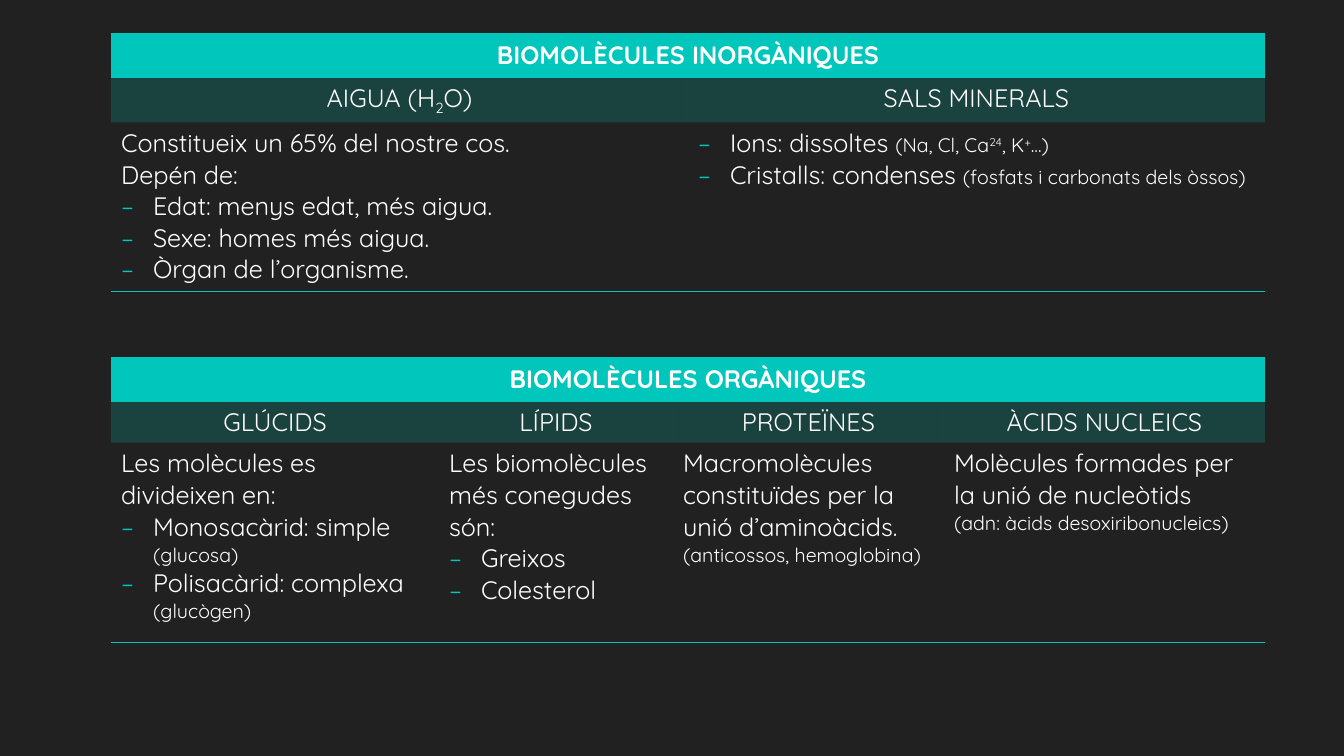
"""Builds a slide with two tables that classify inorganic and organic biomolecules."""
from dataclasses import dataclass

from lxml.etree import SubElement
from pptx import Presentation
from pptx.dml.color import RGBColor
from pptx.enum.text import PP_ALIGN as Align
from pptx.oxml.ns import qn
from pptx.slide import Slide
from pptx.table import _Cell as Cell
from pptx.text.text import _Paragraph as Paragraph
from pptx.util import Pt

PX = 914400 / 100.8
FONT = "Quicksand"
TEAL = RGBColor(0x00, 0xC6, 0xBB)
WHITE = RGBColor(0xFF, 0xFF, 0xFF)
CHARCOAL = RGBColor(0x21, 0x21, 0x21)
PLAIN_STYLE = "{2D5ABB26-0587-4C30-8999-92F81FD0307C}"
INDENT = 32
BODY, DETAIL = 18, 14


@dataclass(frozen=True)
class Span:
    text: str
    size: int = BODY
    baseline: int = 0


@dataclass(frozen=True)
class Line:
    spans: tuple[Span, ...]
    bulleted: bool = False


@dataclass(frozen=True)
class Category:
    heading: tuple[Span, ...]
    width: int
    lines: tuple[Line, ...]


@dataclass(frozen=True)
class Family:
    title: str
    top: int
    row_heights: tuple[int, int, int]
    categories: tuple[Category, ...]


def px(length: int) -> int:
    """Turn pixels into EMU."""
    return round(length * PX)


def text(*spans: Span) -> Line:
    """Describe a plain paragraph."""
    return Line(spans)


def item(*spans: Span) -> Line:
    """Describe a bulleted paragraph."""
    return Line(spans, True)


def detail(content: str, baseline: int = 0) -> Span:
    """Describe a small piece of text."""
    return Span(content, DETAIL, baseline)


FAMILIES = (
    Family("BIOMOLÈCULES INORGÀNIQUES", 34, (43, 44, 169), (
        Category((Span("AIGUA (H"), Span("2", baseline=-25), Span("O)")), 577, (
            text(Span("Constitueix un 65% del nostre cos.\nDepén de:")),
            item(Span("Edat: menys edat, més aigua.")),
            item(Span("Sexe: homes més aigua.")),
            item(Span("Òrgan de l’organisme.")),
        )),
        Category((Span("SALS MINERALS"),), 577, (
            item(Span("Ions: dissoltes "), detail("(Na, Cl, Ca"), detail("24", 30),
                 detail(", K"), detail("+", 30), detail("...)")),
            item(Span("Cristalls: condenses "), detail("(fosfats i carbonats dels òssos)")),
        )),
    )),
    Family("BIOMOLÈCULES ORGÀNIQUES", 358, (43, 41, 200), (
        Category((Span("GLÚCIDS"),), 328, (
            text(Span("Les molècules es divideixen en:")),
            item(Span("Monosacàrid: simple "), detail("(glucosa)")),
            item(Span("Polisacàrid: complexa "), detail("(glucògen)")),
        )),
        Category((Span("LÍPIDS"),), 234, (
            text(Span("Les biomolècules més conegudes són:")),
            item(Span("Greixos")),
            item(Span("Colesterol")),
        )),
        Category((Span("PROTEÏNES"),), 271, (
            text(Span("Macromolècules constituïdes per la unió d’aminoàcids.")),
            text(detail("(anticossos, hemoglobina)")),
        )),
        Category((Span("ÀCIDS NUCLEICS"),), 321, (
            text(Span("Molècules formades per la unió de nucleòtids")),
            text(detail("(adn: àcids desoxiribonucleics)")),
        )),
    )),
)


def add_bullet(paragraph: Paragraph) -> None:
    """Give a paragraph a hanging teal dash."""
    properties = paragraph._p.get_or_add_pPr()
    properties.set("marL", str(px(INDENT)))
    properties.set("indent", str(-px(INDENT)))
    colour = SubElement(properties, qn("a:buClr"))
    SubElement(colour, qn("a:srgbClr"), val=str(TEAL))
    SubElement(properties, qn("a:buFont"), typeface=FONT)
    SubElement(properties, qn("a:buChar"), char="–")


def write(paragraph: Paragraph, span: Span, *, bold: bool = False) -> None:
    """Add a formatted span, with a line break at each newline."""
    for index, piece in enumerate(span.text.split("\n")):
        if index:
            paragraph.add_line_break()
        run = paragraph.add_run()
        run.text = piece
        font = run.font
        font.name, font.size, font.bold = FONT, Pt(span.size), bold
        font.color.rgb = WHITE
        if span.baseline:
            run._r.get_or_add_rPr().set("baseline", str(span.baseline * 1000))


def fill_cell(cell: Cell, lines: tuple[Line, ...], *, centred: bool = False,
              bold: bool = False) -> None:
    """Write the lines of a cell."""
    frame = cell.text_frame
    for index, line in enumerate(lines):
        paragraph = frame.add_paragraph() if index else frame.paragraphs[0]
        paragraph.alignment = Align.CENTER if centred else Align.LEFT
        if line.bulleted:
            add_bullet(paragraph)
        for span in line.spans:
            write(paragraph, span, bold=bold)


def paint_cell(cell: Cell, *, edges: str = "", opacity: int = 0) -> None:
    """Draw teal edges, then a teal fill of the given opacity in percent."""
    properties = cell._tc.get_or_add_tcPr()
    for edge in edges:
        border = SubElement(properties, qn(f"a:ln{edge}"), w=str(Pt(1)))
        solid = SubElement(border, qn("a:solidFill"))
        SubElement(solid, qn("a:srgbClr"), val=str(TEAL))
    if not opacity:
        cell.fill.background()
        return
    cell.fill.solid()
    cell.fill.fore_color.rgb = TEAL
    if opacity < 100:
        colour = properties.find(f"{qn('a:solidFill')}/{qn('a:srgbClr')}")
        SubElement(colour, qn("a:alpha"), val=str(opacity * 1000))


def draw_family(slide: Slide, family: Family) -> None:
    """Add the table of one family of biomolecules."""
    categories = family.categories
    width = sum(category.width for category in categories)
    table = slide.shapes.add_table(
        3, len(categories), px(111), px(family.top), px(width), px(sum(family.row_heights))
    ).table
    table.first_row = table.horz_banding = False
    table._tbl.tblPr.find(qn("a:tableStyleId")).text = PLAIN_STYLE
    for row, height in zip(table.rows, family.row_heights):
        row.height = px(height)
    for column, category in enumerate(categories):
        table.columns[column].width = px(category.width)
        title, heading, body = (table.cell(row, column) for row in range(3))
        paint_cell(title, edges="TB", opacity=100)
        paint_cell(heading, opacity=20)
        paint_cell(body, edges="B")
        fill_cell(heading, (Line(category.heading),), centred=True)
        fill_cell(body, category.lines)
    title = table.cell(0, 0)
    title.merge(table.cell(0, len(categories) - 1))
    fill_cell(title, (text(Span(family.title)),), centred=True, bold=True)


def main() -> None:
    """Build and save the slide."""
    deck = Presentation()
    deck.slide_width, deck.slide_height = px(1344), px(756)
    slide = deck.slides.add_slide(deck.slide_layouts[6])
    slide.background.fill.solid()
    slide.background.fill.fore_color.rgb = CHARCOAL
    for family in FAMILIES:
        draw_family(slide, family)
    deck.save("out.pptx")


if __name__ == "__main__":
    main()
